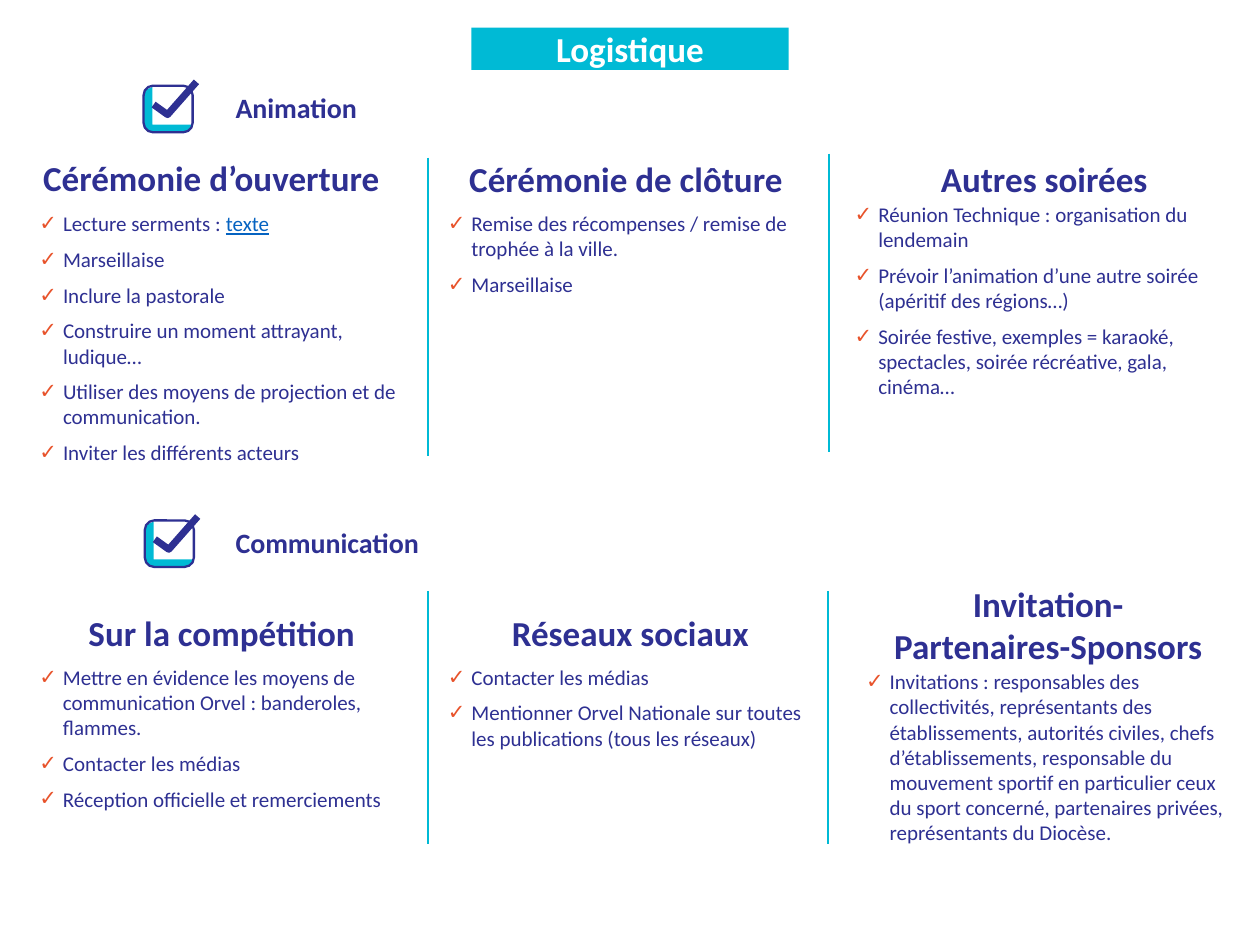
from dataclasses import dataclass

from lxml import etree
from pptx import Presentation
from pptx.dml.color import RGBColor
from pptx.enum import shapes, text
from pptx.oxml.ns import qn
from pptx.util import Pt


@dataclass(frozen=True)
class Theme:
    navy: RGBColor = RGBColor(0x2E, 0x30, 0x92)
    cyan: RGBColor = RGBColor(0x00, 0xBA, 0xD5)
    orange: str = "E8532B"
    link: RGBColor = RGBColor(0x05, 0x63, 0xC1)
    white: RGBColor = RGBColor(0xFF, 0xFF, 0xFF)
    font: str = "Calibri"
    title: int = 20
    heading: int = 16
    body: int = 12


THEME = Theme()
TITLE_HEIGHT = 24.2
LIST_WIDTH = 210
LINK_TEXT = "texte"

# Each column: title, title box (left, top, width), list corner, items
ANIMATION = [
    ("Cérémonie d’ouverture", (15.8, 89.3, 210), (21.6, 119.5), [
        "Lecture serments : " + LINK_TEXT,
        "Marseillaise",
        "Inclure la pastorale",
        "Construire un moment attrayant, ludique…",
        "Utiliser des moyens de projection et de communication.",
        "Inviter les différents acteurs"]),
    ("Cérémonie de clôture ", (255, 90, 210), (255, 119.5), [
        "Remise des récompenses / remise de trophée à la ville.",
        "Marseillaise"]),
    ("Autres soirées ", (494, 90, 210), (487.5, 114.3), [
        "Réunion Technique : organisation du lendemain",
        "Prévoir l’animation d’une autre soirée (apéritif des régions…)",
        "Soirée festive, exemples = karaoké, spectacles, soirée récréative, "
        "gala, cinéma…"]),
]
COMMUNICATION = [
    ("Sur la compétition", (19.4, 349.2, 214.6), (21.6, 378.7), [
        "Mettre en évidence les moyens de communication Orvel : banderoles, "
        "flammes.",
        "Contacter les médias",
        "Réception officielle et remerciements"]),
    ("Réseaux sociaux", (268.4, 349.2, 183.6), (255, 378.7), [
        "Contacter les médias",
        "Mentionner Orvel Nationale sur toutes les publications (tous les "
        "réseaux)"]),
    ("Invitation-Partenaires-Sponsors", (510.5, 332.6, 177), (494, 381.2), [
        "Invitations : responsables des collectivités, représentants des "
        "établissements, autorités civiles, chefs d’établissements, "
        "responsable du mouvement sportif en particulier ceux du sport "
        "concerné, partenaires privées, représentants du Diocèse."]),
]


def place(shape, left, top, width, height):
    shape.left, shape.top = Pt(left), Pt(top)
    shape.width, shape.height = Pt(width), Pt(height)


def prepare_frame(shape):
    frame = shape.text_frame
    frame.word_wrap = True
    frame.auto_size = text.MSO_AUTO_SIZE.NONE
    frame.vertical_anchor = text.MSO_ANCHOR.TOP
    frame.margin_left = frame.margin_right = 0
    frame.margin_top = frame.margin_bottom = 0
    return frame


def style(paragraph, size, color=THEME.navy, bold=False, centred=False):
    paragraph.alignment = text.PP_ALIGN.CENTER if centred else text.PP_ALIGN.LEFT
    font = paragraph.font
    font.name, font.size, font.bold = THEME.font, Pt(size), bold
    font.color.rgb = color


def add_label(slide, label, box, size, centred=False):
    frame = prepare_frame(slide.shapes.add_textbox(*map(Pt, box)))
    frame.text = label
    style(frame.paragraphs[0], size, bold=True, centred=centred)
    return frame.paragraphs[0]


def add_check_bullet(paragraph):
    props = paragraph._p.get_or_add_pPr()
    props.set("marL", str(Pt(14.4)))
    props.set("indent", str(-Pt(13.5)))
    color = etree.SubElement(props, qn("a:buClr"))
    etree.SubElement(color, qn("a:srgbClr"), val=THEME.orange)
    etree.SubElement(props, qn("a:buFont"), typeface="Arial")
    etree.SubElement(props, qn("a:buChar"), char="✓")


def banner(title, box):
    place(title, *box)
    title.fill.solid()
    title.fill.fore_color.rgb = THEME.cyan
    frame = prepare_frame(title)
    frame.text = "Logistique"
    style(frame.paragraphs[0], THEME.title, THEME.white, True, True)


def checkbox_icon(slide, left, top):
    icon = slide.shapes.add_group_shape().shapes

    def outline(points, close):
        (x, y), *rest = [(Pt(left + dx), Pt(top + dy)) for dx, dy in points]
        builder = icon.build_freeform(x, y)
        builder.add_line_segments(rest, close=close)
        return builder.convert_to_shape()

    # Cyan edge on the left and bottom
    edge = outline([(5, 2.9), (1.5, 4.5), (0, 7.2), (0, 25.9), (1.4, 27.6),
                    (4.3, 28.8), (24.5, 28.8), (27.4, 26.6), (28.1, 24.5),
                    (5, 24.5)], True)
    edge.fill.solid()
    edge.fill.fore_color.rgb = THEME.cyan
    edge.line.fill.background()

    # Box and tick
    frame = icon.add_shape(shapes.MSO_SHAPE.ROUNDED_RECTANGLE, Pt(left),
                           Pt(top + 2.2), Pt(28), Pt(26.6))
    frame.adjustments[0] = 0.2
    tick = outline([(5.7, 13), (13.7, 18.7), (30.2, 0)], False)
    for part, weight in ((frame, 1.3), (tick, 4)):
        part.fill.background()
        part.line.color.rgb = THEME.navy
        part.line.width = Pt(weight)
    for part in (edge, frame, tick):
        part.shadow.inherit = False


def divider(slide, x, top, bottom):
    line = slide.shapes.add_connector(shapes.MSO_CONNECTOR.STRAIGHT,
                                      Pt(x), Pt(top), Pt(x), Pt(bottom))
    line.line.color.rgb = THEME.cyan
    line.line.width = Pt(1.25)
    etree.SubElement(line._element.spPr, qn("a:effectLst"))


def check_list(shape, box, items):
    place(shape, *box)
    frame = prepare_frame(shape)
    frame.margin_top = Pt(0.9)
    for number, item in enumerate(items):
        paragraph = frame.paragraphs[0] if number == 0 else frame.add_paragraph()
        add_check_bullet(paragraph)
        paragraph.space_before = Pt(6 if number else 0)
        style(paragraph, THEME.body)
        lead, link, _ = item.partition(" : " + LINK_TEXT)
        if link:
            paragraph.add_run().text = lead + " : "
            linked = paragraph.add_run()
            linked.text = LINK_TEXT
            linked.font.underline = True
            linked.font.color.rgb = THEME.link
        else:
            paragraph.add_run().text = item


def section(slide, bodies, heading, corner, columns, dividers, list_height):
    left, top = corner
    checkbox_icon(slide, left, top)
    label = add_label(slide, heading, (126.7, top + 5, 165.6, 19.4), THEME.heading)
    label._p.get_or_add_pPr().set("marL", str(Pt(7.9)))
    for line in dividers:
        divider(slide, *line)
    for title, (x, y, width), list_corner, items in columns:
        add_label(slide, title, (x, y, width, TITLE_HEIGHT), THEME.title, True)
        # Template bodies come first, then text boxes for the remaining lists
        body = next(bodies, None) or slide.shapes.add_textbox(0, 0, 0, 0)
        check_list(body, (*list_corner, LIST_WIDTH, list_height), items)


def main():
    deck = Presentation()
    deck.slide_width, deck.slide_height = Pt(720), Pt(540)
    slide = deck.slides.add_slide(deck.slide_layouts[3])
    title, *bodies = slide.placeholders
    bodies = iter(bodies)
    banner(title, (269.3, 15.8, 181.4, TITLE_HEIGHT))
    section(slide, bodies, "Animation", (82.1, 46.8), ANIMATION,
            [(244.8, 90, 260.6), (473.8, 87.8, 258.5)], 147.6)
    section(slide, bodies, "Communication", (82.8, 295.2), COMMUNICATION,
            [(244.8, 337.7, 482.4), (473, 337.7, 482.4)], 103)
    deck.save("out.pptx")


if __name__ == "__main__":
    main()
